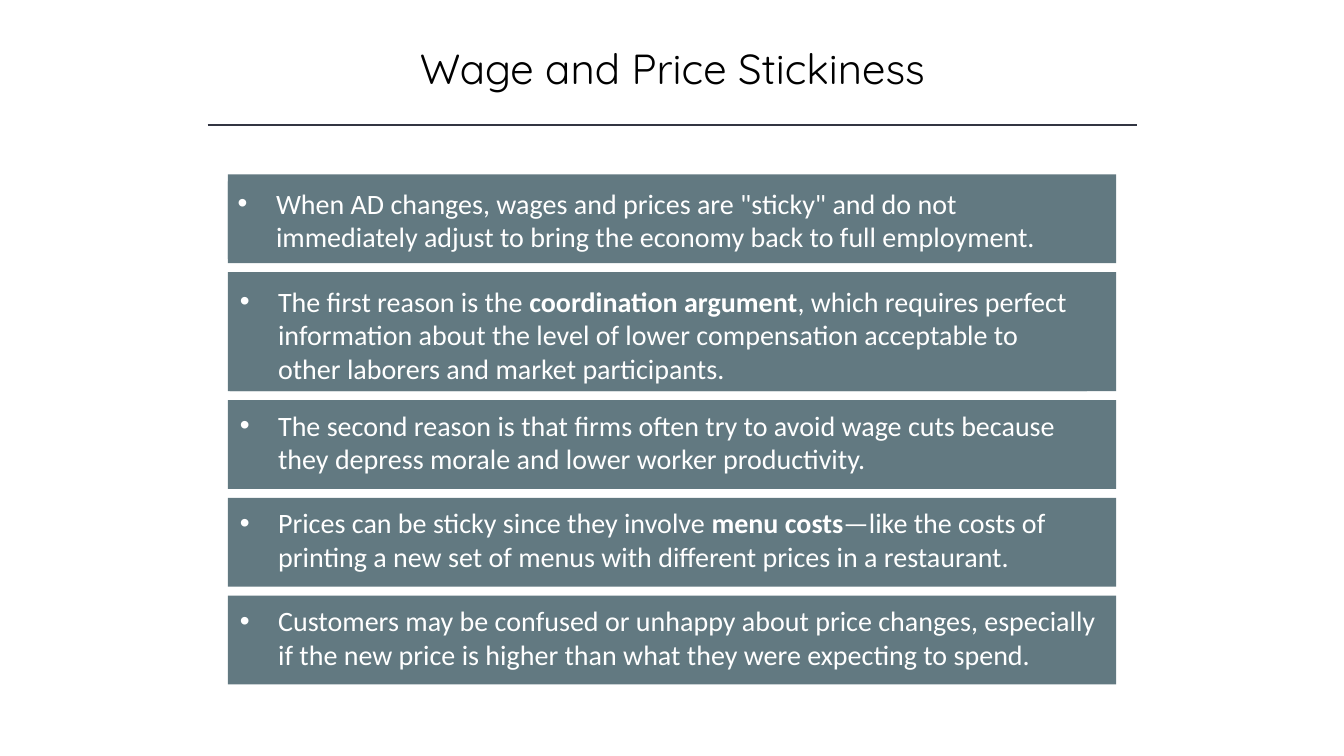
from dataclasses import dataclass

from lxml import etree
from pptx import Presentation
from pptx.dml.color import RGBColor
from pptx.enum.shapes import MSO_CONNECTOR, MSO_SHAPE
from pptx.enum.text import MSO_ANCHOR, PP_ALIGN
from pptx.oxml.ns import qn
from pptx.util import Emu, Pt

RECTANGLE = MSO_SHAPE.RECTANGLE
STRAIGHT = MSO_CONNECTOR.STRAIGHT
TOP = MSO_ANCHOR.TOP
LEFT, CENTER = PP_ALIGN.LEFT, PP_ALIGN.CENTER

PX = 9144  # 100 px to the inch
PANEL_LEFT, PANEL_TOP, PANEL_WIDTH, PANEL_GAP = 226, 173, 881, 9
INDENT = 38
SLATE, RULE_COLOR, WHITE, BLACK = "627981", "323542", "FFFFFF", "000000"

TITLE_FORMAT = {"name": "Quicksand", "size": Pt(30)}
BODY_FORMAT = {"name": "Calibri", "size": Pt(20)}


@dataclass
class Point:
    """A bullet point on its panel; odd-numbered runs are bold."""
    runs: list[str]
    height: int
    text_left: int
    text_top: int
    text_width: int
    text_height: int


POINTS = [
    Point(['When AD changes, wages and prices are "sticky" and do not immediately '
           "adjust to bring the economy back to full employment."],
          88, 0, 7, 880, 77),
    Point(["The first reason is the ", "coordination argument",
           ", which requires perfect information about the level of lower "
           "compensation acceptable to other laborers and market participants."],
          118, 2, 7, 850, 111),
    Point(["The second reason is that firms often try to avoid wage cuts because "
           "they depress morale and lower worker productivity."],
          88, 2, 3, 878, 77),
    Point(["Prices can be sticky since they involve ", "menu costs",
           "—like the costs of printing a new set of menus with different prices "
           "in a restaurant."],
          88, 2, 3, 878, 77),
    Point(["Customers may be confused or unhappy about price changes, especially "
           "if the new price is higher than what they were expecting to spend."],
          88, 2, 3, 878, 77),
]


def px(*lengths: int) -> list[Emu]:
    return [Emu(length * PX) for length in lengths]


def color(value: str) -> RGBColor:
    return RGBColor.from_string(value)


def add_run(paragraph, text: str, formats: dict, font_color: str):
    run = paragraph.add_run()
    run.text = text
    for name, value in formats.items():
        setattr(run.font, name, value)
    run.font.color.rgb = color(font_color)


def add_rectangle(shapes, left: int, top: int, width: int, height: int):
    shape = shapes.add_shape(RECTANGLE, *px(left, top, width, height))
    shape.shadow.inherit = False
    shape.fill.solid()
    shape.fill.fore_color.rgb = color(SLATE)
    shape.line.fill.background()
    return shape


def add_bullet(paragraph):
    properties = paragraph._p.get_or_add_pPr()
    properties.set("marL", str(INDENT * PX))
    properties.set("indent", str(-INDENT * PX))
    etree.SubElement(properties, qn("a:buFont")).set("typeface", "Arial")
    etree.SubElement(properties, qn("a:buChar")).set("char", "•")


def add_title(slide, text: str):
    frame = slide.shapes.add_textbox(*px(167, 37, 1000, 61)).text_frame
    frame.word_wrap = True
    paragraph = frame.paragraphs[0]
    paragraph.alignment = CENTER
    add_run(paragraph, text, TITLE_FORMAT, BLACK)


def add_rule(slide):
    rule = slide.shapes.add_connector(STRAIGHT, *px(206, 124, 1128, 124))
    rule.line.color.rgb = color(RULE_COLOR)
    rule.line.width = Pt(1)
    etree.SubElement(rule._element.spPr, qn("a:effectLst"))


def add_point(slide, point: Point, top: int):
    shapes = slide.shapes.add_group_shape().shapes
    add_rectangle(shapes, PANEL_LEFT, top, PANEL_WIDTH, point.height)
    text_shape = add_rectangle(shapes, PANEL_LEFT + point.text_left,
                               top + point.text_top,
                               point.text_width, point.text_height)
    frame = text_shape.text_frame
    frame.word_wrap = True
    frame.vertical_anchor = TOP
    paragraph = frame.paragraphs[0]
    paragraph.alignment = LEFT
    add_bullet(paragraph)
    for index, text in enumerate(point.runs):
        add_run(paragraph, text, BODY_FORMAT | {"bold": index % 2 == 1}, WHITE)


def main():
    presentation = Presentation()
    presentation.slide_width, presentation.slide_height = px(1333, 750)
    slide = presentation.slides.add_slide(presentation.slide_layouts[6])

    # Heading
    add_title(slide, "Wage and Price Stickiness")
    add_rule(slide)

    # Stacked panels
    top = PANEL_TOP
    for point in POINTS:
        add_point(slide, point, top)
        top += point.height + PANEL_GAP

    presentation.save("out.pptx")


if __name__ == "__main__":
    main()
